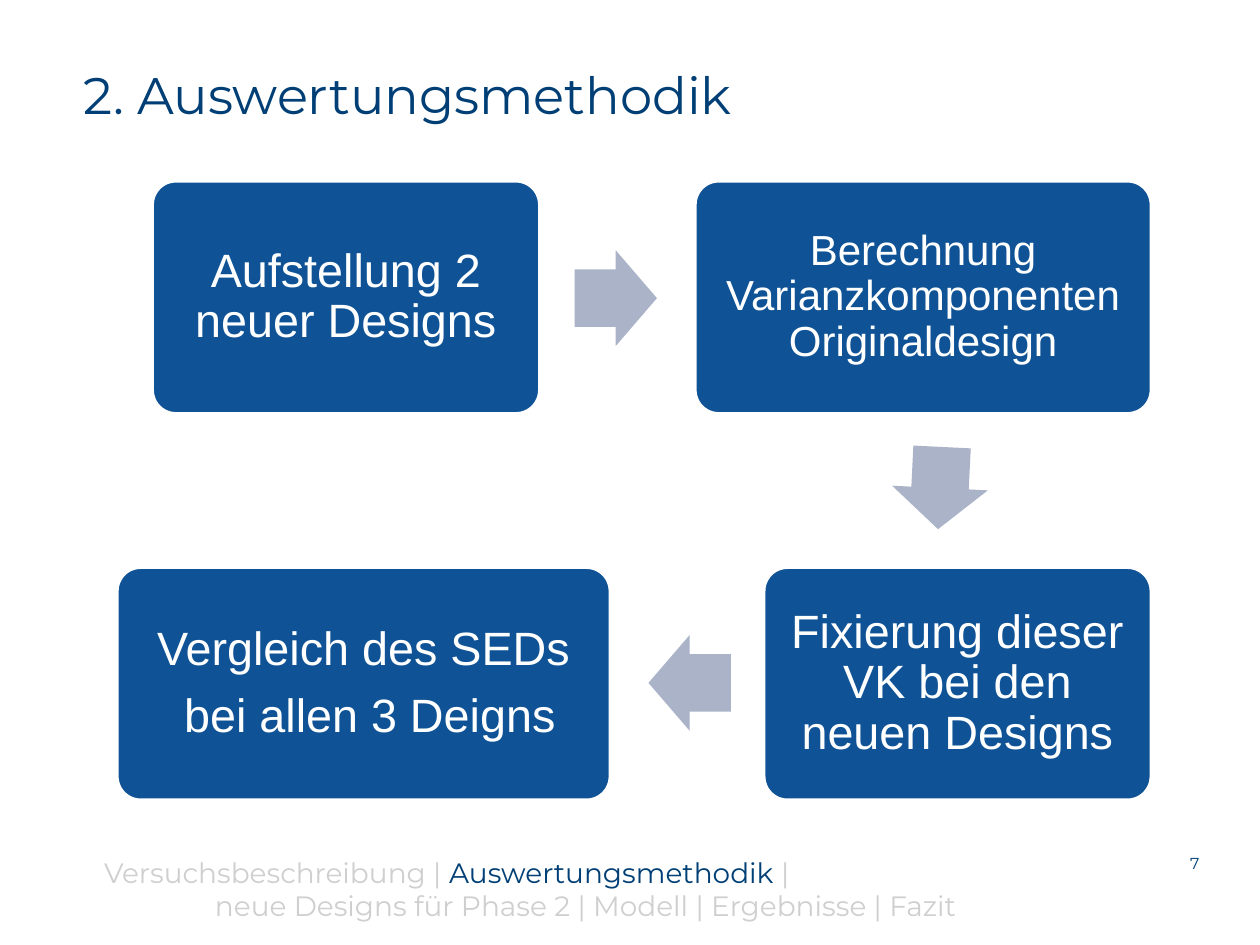
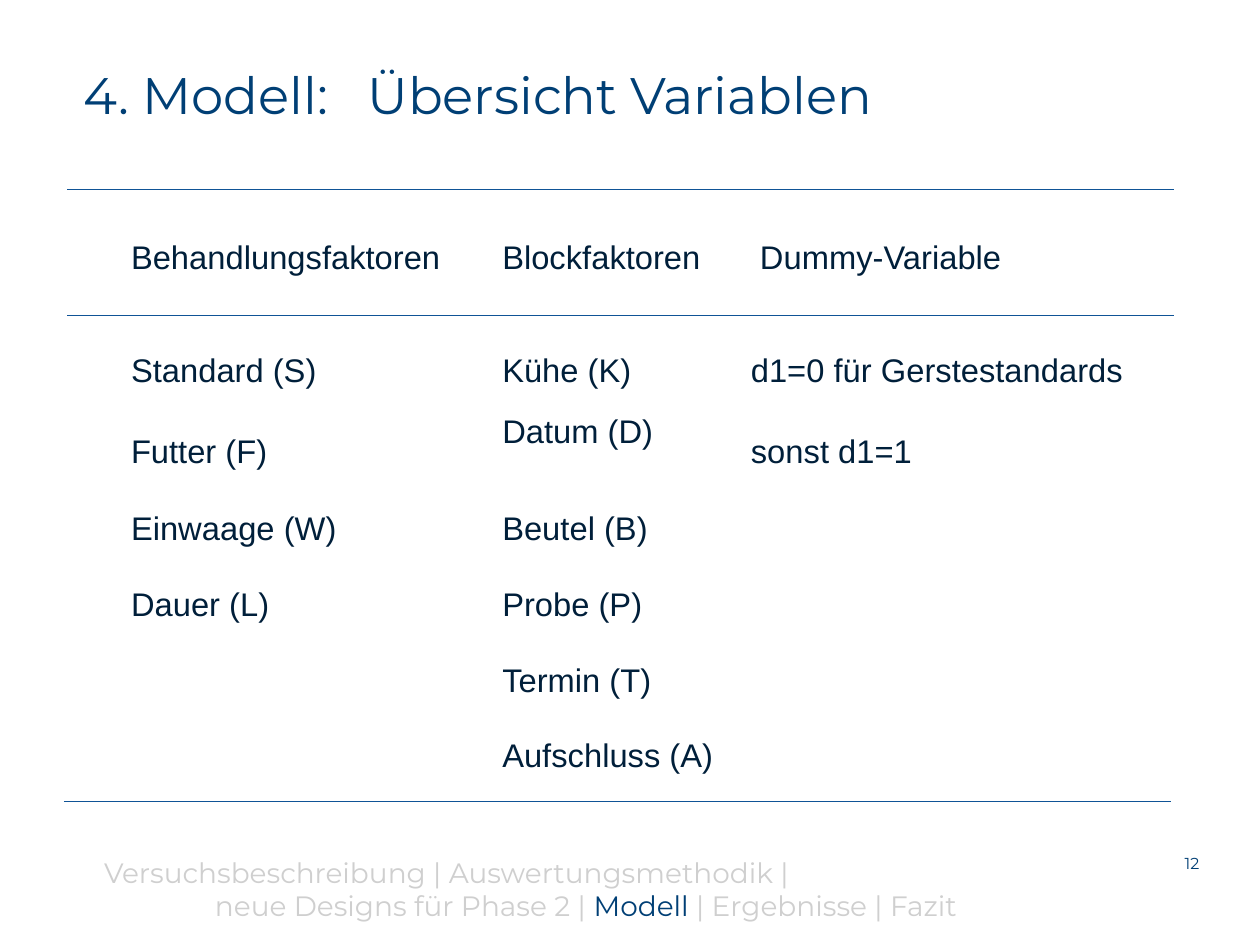
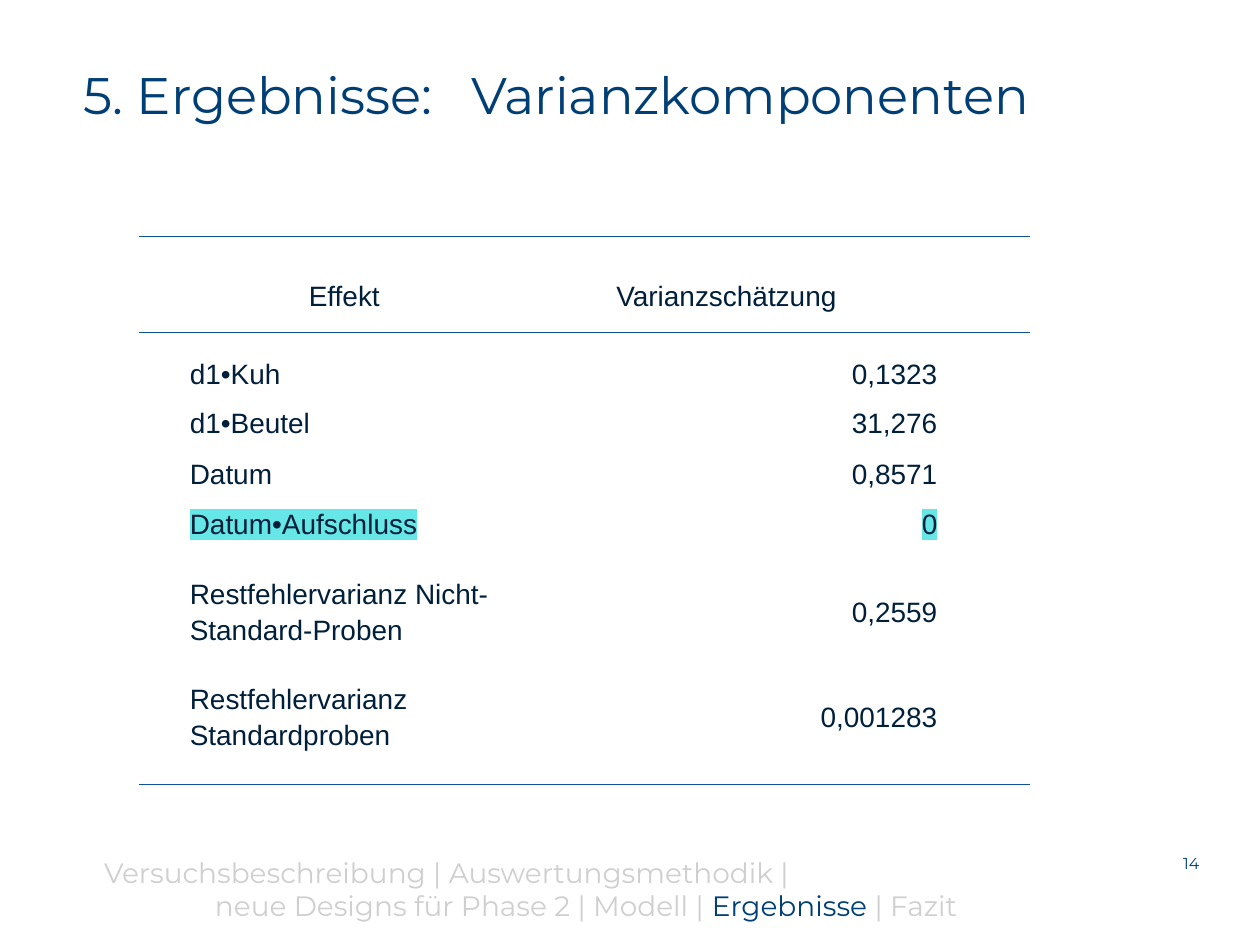
from dataclasses import dataclass
from lxml import etree
from pptx import Presentation
from pptx.dml.color import RGBColor
from pptx.enum import shapes, text
from pptx.oxml.ns import qn
from pptx.util import Inches, Pt


@dataclass(frozen=True)
class Theme:
    navy: str = "003F75"
    blue: str = "0F5396"
    ink: str = "001F3A"
    pale: str = "CFCFCF"
    arrow: str = "ABB3C9"
    mark: str = "66E6E6"
    white: str = "FFFFFF"
    head: str = "Montserrat"
    body: str = "Arial"
    title: float = 22
    foot: float = 12
    page: float = 6.8
    plain: str = "{2D5ABB26-0587-4C30-8999-92F81FD0307C}"


T = Theme()
WIDE = 7.5
HIGH = WIDE * 3 / 4
LEFT, CENTER, RIGHT = text.PP_ALIGN.LEFT, text.PP_ALIGN.CENTER, text.PP_ALIGN.RIGHT
TOP, MIDDLE, BOTTOM = text.MSO_ANCHOR.TOP, text.MSO_ANCHOR.MIDDLE, text.MSO_ANCHOR.BOTTOM

# Agenda lines: left indent and topics
AGENDA = [
    (0, ["Versuchsbeschreibung", "Auswertungsmethodik"]),
    (0.66, ["neue Designs für Phase 2", "Modell", "Ergebnisse", "Fazit"]),
]

# Steps: left, top, width, type size, paragraphs
STEPS = [
    (0.91, 1.08, 2.3, 20, ["Aufstellung 2 neuer Designs"]),
    (4.14, 1.08, 2.71, 18, ["Berechnung Varianzkomponenten Originaldesign"]),
    (4.55, 3.38, 2.3, 20, ["Fixierung dieser VK bei den neuen Designs"]),
    (0.7, 3.38, 2.93, 20, ["Vergleich des SEDs", " bei allen 3 Deigns"]),
]
STEP_H = 1.38
# Arrows: left, top, rotation
ARROWS = [(3.42, 1.49, 0), (5.35, 2.62, 92.8), (3.86, 3.78, 180)]

FACTORS = [
    ("Behandlungsfaktoren", "Blockfaktoren", " Dummy-Variable"),
    ("Standard (S)", "Kühe (K)", "d1=0 für Gerstestandards"),
    ("Futter (F)", "Datum (D)", "sonst d1=1"),
    ("Einwaage (W)", "Beutel (B)", ""),
    ("Dauer (L)", "Probe (P)", ""),
    ("", "Termin (T)", ""),
    ("", "Aufschluss (A)", ""),
]
EFFECTS = [
    ("Effekt", "Varianzschätzung"),
    ("d1•Kuh", "0,1323"),
    ("d1•Beutel", "31,276"),
    ("Datum", "0,8571"),
    ("Datum•Aufschluss", "0"),
    ("Restfehlervarianz Nicht-Standard-Proben", "0,2559"),
    ("Restfehlervarianz Standardproben", "0,001283"),
]


def rgb(code):
    return RGBColor.from_string(code)


def add_run(para, words, size, color, font, mark=None):
    run = para.add_run()
    run.text = words
    run.font.size, run.font.name = Pt(size), font
    run.font.color.rgb = rgb(color)
    if mark:
        light = etree.Element(qn("a:highlight"))
        etree.SubElement(light, qn("a:srgbClr"), val=mark)
        run.font._element.find(qn("a:solidFill")).addnext(light)


def set_pad(obj, side, top, low=None):
    obj.margin_left = obj.margin_right = Inches(side)
    obj.margin_top = Inches(top)
    obj.margin_bottom = Inches(top if low is None else low)


def add_box(slide, left, top, width, height):
    frame = slide.shapes.add_textbox(*map(Inches, (left, top, width, height))).text_frame
    frame.word_wrap = True
    set_pad(frame, 0, 0)
    return frame


def add_page(deck, title, topic, number, tab=None):
    """Add a slide with title, agenda footer and page number."""
    slide = deck.slides.add_slide(deck.slide_layouts[6])
    frame = add_box(slide, 0.4, 0.33, 6.75, 0.47)
    set_pad(frame, 0.1, 0.05)
    para = frame.paragraphs[0]
    add_run(para, title, T.title, T.navy, T.head)
    if tab:
        stops = etree.SubElement(para._p.get_or_add_pPr(), qn("a:tabLst"))
        etree.SubElement(stops, qn("a:tab"), pos=str(Inches(tab)), algn="l")

    frame = add_box(slide, 0.62, 5.09, 5.8, 0.41)
    for row, (indent, topics) in enumerate(AGENDA):
        para = frame.add_paragraph() if row else frame.paragraphs[0]
        para._p.get_or_add_pPr().set("marL", str(Inches(indent)))
        for i, name in enumerate(topics):
            if i:
                add_run(para, " | ", T.foot, T.pale, T.head)
            add_run(para, name, T.foot, T.navy if name == topic else T.pale, T.head)
        if row < len(AGENDA) - 1:
            add_run(para, " |", T.foot, T.pale, T.head)

    para = add_box(slide, 6.76, 5.08, 0.38, 0.11).paragraphs[0]
    para.alignment = RIGHT
    add_run(para, str(number), T.page, T.navy, T.head)
    return slide


def add_form(slide, kind, place, fill, adjust):
    form = slide.shapes.add_shape(kind, *map(Inches, place))
    form.shadow.inherit = False
    form.fill.solid()
    form.fill.fore_color.rgb = rgb(fill)
    form.line.fill.background()
    for i, value in enumerate(adjust):
        form.adjustments[i] = value
    return form


def add_step(slide, left, top, width, size, lines):
    form = add_form(slide, shapes.MSO_SHAPE.ROUNDED_RECTANGLE,
                    (left, top, width, STEP_H), T.blue, [0.1])
    form.line.color.rgb = rgb(T.white)
    form.line.width = Pt(1)
    frame = form.text_frame
    frame.word_wrap, frame.vertical_anchor = True, MIDDLE
    set_pad(frame, 0.11, 0.11)
    for i, line in enumerate(lines):
        para = frame.add_paragraph() if i else frame.paragraphs[0]
        para.alignment, para.line_spacing = CENTER, 0.9
        para.space_after = Pt(size * 0.35)
        add_run(para, line, size, T.white, T.body)


def add_rules(slide, left, right, tops, shift=0):
    """Draw level rules; the last one is moved sideways by shift."""
    for top in tops:
        move = shift if top == tops[-1] else 0
        ends = map(Inches, (left + move, top, right + move, top))
        rule = slide.shapes.add_connector(shapes.MSO_CONNECTOR.STRAIGHT, *ends)
        rule.line.color.rgb = rgb(T.blue)
        rule.line.width = Pt(0.5)
        etree.SubElement(rule._element.spPr, qn("a:effectLst"))


def add_grid(slide, left, top, wide, high, data, size, gap, style):
    """Add a plain table; style(row, col) gives align, anchor, top pad, mark."""
    place = map(Inches, (left, top, sum(wide), sum(high)))
    grid = slide.shapes.add_table(len(high), len(wide), *place).table
    grid.first_row = grid.horz_banding = False
    grid._tbl.tblPr.find(qn("a:tableStyleId")).text = T.plain
    for col, width in zip(grid.columns, wide):
        col.width = Inches(width)
    for r, words in enumerate(data):
        grid.rows[r].height = Inches(high[r])
        for c, word in enumerate(words):
            align, anchor, pad, mark = style(r, c)
            cell = grid.cell(r, c)
            cell.fill.background()
            cell.vertical_anchor = anchor
            set_pad(cell, 0.05, pad, 0)
            para = cell.text_frame.paragraphs[0]
            para.alignment, para.line_spacing = align, gap
            if word:
                add_run(para, word, size, T.ink, T.body, mark)


def factor_style(row, col):
    high = row == 0 or (row, col) == (2, 1)
    return LEFT, TOP if high else MIDDLE, 0, None


def effect_style(row, col):
    if row == 0:
        return CENTER, BOTTOM, 0, None
    return (RIGHT if col else LEFT, MIDDLE, 0.21 if row == 1 else 0,
            T.mark if row == 4 else None)


def main():
    deck = Presentation()
    deck.slide_width, deck.slide_height = Inches(WIDE), Inches(HIGH)

    flow = add_page(deck, "2. Auswertungsmethodik", "Auswertungsmethodik", 7)
    for step in STEPS:
        add_step(flow, *step)
    for left, top, turn in ARROWS:
        arrow = add_form(flow, shapes.MSO_SHAPE.RIGHT_ARROW,
                         (left, top, 0.49, 0.57), T.arrow, [0.6, 0.5])
        arrow.rotation = turn

    model = add_page(deck, "4. Modell:\tÜbersicht Variablen", "Modell", 12, 1.69)
    add_grid(model, 0.73, 1.41, [2.21, 1.48, 2.35], [0.54, 0.5, 0.47] + [0.45] * 4,
             FACTORS, 14, 1.07, factor_style)
    add_rules(model, 0.4, 6.99, [1.13, 1.88, 4.77], -0.02)

    result = add_page(deck, "5. Ergebnisse:\tVarianzkomponenten", "Ergebnisse", 14, 2.31)
    add_grid(result, 1.08, 1.12, [1.94, 2.61], [0.74, 0.5] + [0.3] * 3 + [0.75, 0.5],
             EFFECTS, 12, 1.15, effect_style)
    add_rules(result, 0.83, 6.13, [1.41, 1.98, 4.67])

    deck.save("out.pptx")


if __name__ == "__main__":
    main()
